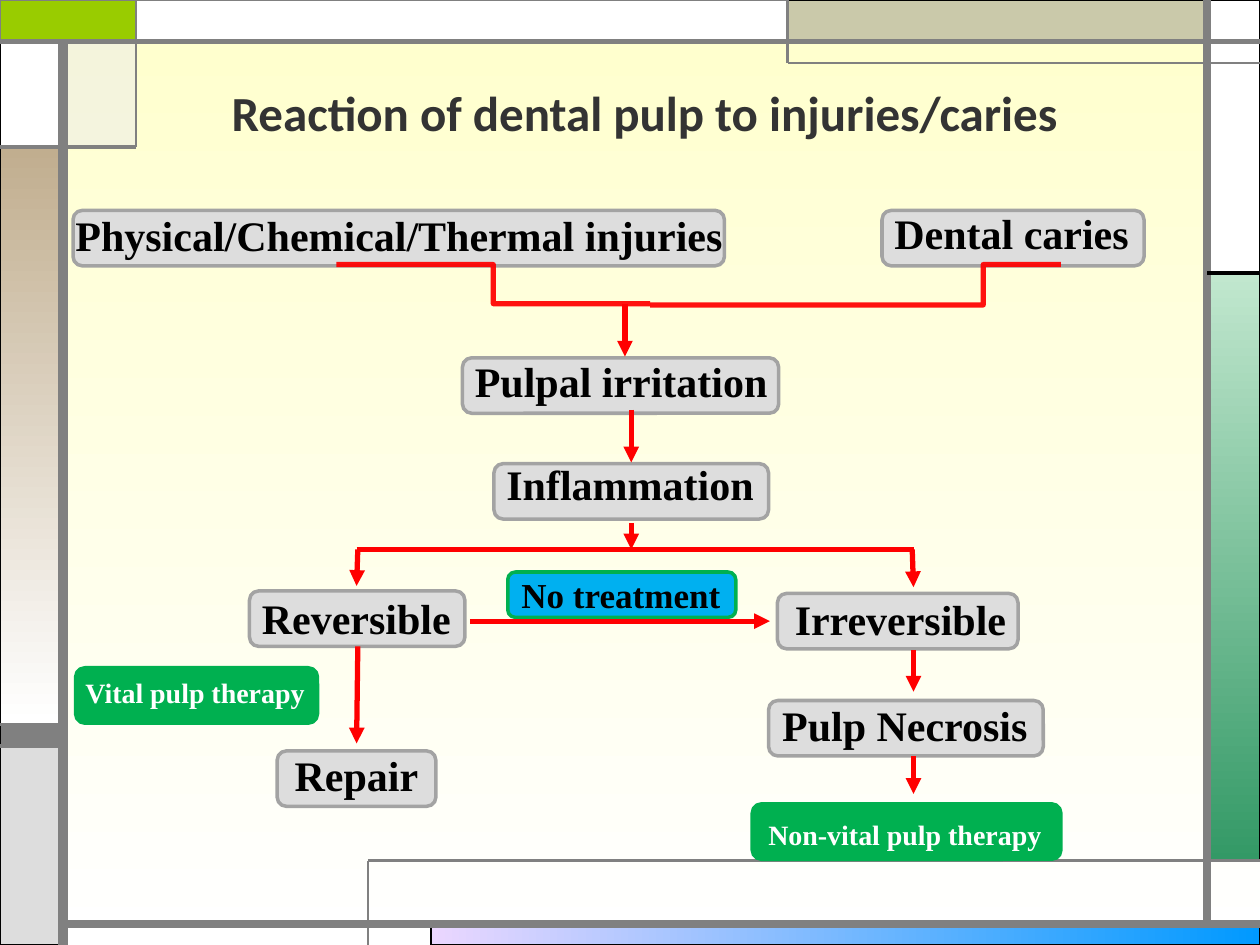
"""Build a flow chart slide on how dental pulp reacts to injuries and caries."""
from dataclasses import dataclass

from lxml import etree
from pptx import Presentation
from pptx import util as u
from pptx.dml.color import RGBColor
from pptx.enum import shapes, text
from pptx.oxml.ns import qn

PX = 9144


@dataclass(frozen=True)
class Theme:
    head: str = "Calibri"
    body: str = "Times New Roman"
    ink: str = "000000"
    dark: str = "333333"
    white: str = "FFFFFF"
    cream: str = "FFFFCC"
    gray: str = "808080"
    pale: str = "DDDDDD"
    edge: str = "A3A3A3"
    red: str = "FF0000"
    glow: str = "C00000"
    green: str = "00B050"
    blue: str = "00B0F0"
    big: int = 28
    mid: int = 24
    note: int = 20
    small: int = 16


def px(*vals):
    return [u.Emu(v * PX) for v in vals]


def sub(node, tag, **attrs):
    return etree.SubElement(node, qn(tag), attrs)


def paint(fill, color):
    if isinstance(color, str):
        fill.solid()
        fill.fore_color.rgb = RGBColor.from_string(color)
        return
    start, end, angle = color
    fill.gradient()
    fill.gradient_angle = angle
    for stop, tone in zip(fill.gradient_stops, (start, end)):
        stop.color.rgb = RGBColor.from_string(tone)


def fade(node, percent):
    for tone in node.iter(qn("a:srgbClr")):
        sub(tone, "a:alpha", val=str(percent * 1000))


def write(frame, words, font, size, color, align=None):
    par = frame.paragraphs[0]
    par.alignment = align
    run = par.add_run()
    run.text = words
    run.font.name, run.font.size, run.font.bold = font, u.Pt(size), True
    run.font.color.rgb = RGBColor.from_string(color)
    return run


class Deck:
    def __init__(self, theme):
        self.theme = theme
        self.show = Presentation()
        self.show.slide_width, self.show.slide_height = px(1000, 750)
        self.slide = self.show.slides.add_slide(self.show.slide_layouts[5])
        self.items = self.slide.shapes
        paint(self.slide.background.fill, (theme.cream, theme.white, 270))

    def title(self, at, words):
        t, box = self.theme, self.items.title
        box.left, box.top, box.width, box.height = px(*at)
        box.text_frame.vertical_anchor = text.MSO_ANCHOR.MIDDLE
        run = write(box.text_frame, words, t.head, t.big, t.dark,
                    text.PP_ALIGN.CENTER)
        props = run.font.fill._xPr
        glow = etree.Element(qn("a:effectLst"))
        props.find(qn("a:solidFill")).addnext(glow)
        cast = sub(glow, "a:outerShdw", blurRad="50800", dist="38100",
                   dir="2700000", algn="tl", rotWithShape="0")
        sub(cast, "a:srgbClr", val=t.glow)

    def box(self, at, fill, line, width, kind=shapes.MSO_SHAPE.RECTANGLE,
            alpha=None):
        item = self.items.add_shape(kind, *px(*at))
        item.shadow.inherit = False
        paint(item.fill, fill)
        if alpha:
            fade(item._element.spPr.find(qn("a:solidFill")), alpha)
        paint(item.line.fill, line)
        item.line.width = u.Pt(width)

    def node(self, at, fill, line):
        self.box(at, fill, line, 2, shapes.MSO_SHAPE.ROUNDED_RECTANGLE)

    def label(self, at, words, size, color):
        frame = self.items.add_textbox(*px(*at)).text_frame
        frame.word_wrap = False
        frame.auto_size = text.MSO_AUTO_SIZE.SHAPE_TO_FIT_TEXT
        write(frame, words, self.theme.body, size, color)
        gap = sub(frame.paragraphs[0]._p.get_or_add_pPr(), "a:spcBef")
        sub(gap, "a:spcPct", val="20000")

    def line(self, ends, color, width, arrow=False, bend=None):
        kind = shapes.MSO_CONNECTOR.ELBOW if bend else shapes.MSO_CONNECTOR.STRAIGHT
        item = self.items.add_connector(kind, *px(*ends))
        paint(item.line.fill, color)
        item.line.width = u.Pt(width)
        props = item._element.spPr
        if arrow:
            sub(item.line._ln, "a:tailEnd", type="triangle")
        if bend:
            fade(item.line._ln, 93)
            guides = props.find(qn("a:prstGeom")).get_or_add_avLst()
            sub(guides, "a:gd", name="adj1", fmla=f"val {bend}")
        sub(props, "a:effectLst")


def frame(deck):
    t = deck.theme
    for at, fill in (
            ((342, 733, 658, 17), ("EBD7FF", "0099FF", 0)),
            ((958, 217, 42, 467), ("C1E7CE", "339966", 270)),
            ((0, 575, 50, 17), t.gray),
            ((0, 592, 50, 158), t.pale),
            ((958, 0, 42, 217), t.white),
            ((625, 0, 333, 33), "CAC9AA")):
        deck.box(at, fill, t.ink, 0.75)
    deck.box((50, 33, 58, 83), "EAEAEA", t.ink, 0.75, alpha=50)
    deck.box((0, 117, 50, 458), ("C1AE8F", t.white, 270), t.ink, 0.75)
    deck.box((0, 33, 50, 83), t.white, t.ink, 0.75)
    deck.box((0, 0, 108, 33), "99CC00", t.gray, 1.5)
    deck.box((108, 0, 517, 33), t.white, t.gray, 0.75)
    for width, *ends in (
            (6, 50, 750, 50, 33), (4.5, 50, 733, 1000, 733),
            (4.5, 958, 733, 958, 0), (3, 0, 33, 1000, 33),
            (1.5, 1000, 50, 625, 50), (1.5, 625, 50, 625, 0),
            (1.5, 108, 0, 108, 117), (2.25, 108, 117, 0, 117),
            (1.5, 292, 750, 292, 683), (1.5, 292, 683, 1000, 683),
            (2.25, 50, 575, 0, 575), (2.25, 50, 592, 0, 592)):
        deck.line(ends, t.gray, width)
    deck.line((958, 217, 1000, 217), t.ink, 2.25)


def chart(deck):
    t = deck.theme
    steps = (
        ("Physical/Chemical/Thermal injuries", (58, 167, 517), (50, 161, 539)),
        ("Dental caries", (700, 167, 208), (700, 160, 208)),
        ("Pulpal irritation", (367, 284, 251), (367, 277, 255)),
        ("Inflammation", (392, 368, 218), (392, 359, 218)),
        ("Reversible", (198, 469, 171), (198, 465, 171)),
        ("Irreversible", (617, 471, 191), (621, 466, 190)),
        ("Pulp Necrosis", (610, 556, 218), (611, 550, 217)),
        ("Repair", (220, 596, 126), (224, 590, 119)))
    for words, spot, place in steps:
        deck.node((*spot, 44), t.pale, t.edge)
        deck.label((*place, 50), words, t.mid, t.ink)
    cures = (
        ("Vital pulp therapy", (60, 530, 192), (58, 531, 197)),
        ("Non-vital pulp therapy", (597, 638, 245), (600, 644, 247)))
    for words, spot, place in cures:
        deck.node((*spot, 44), t.green, t.green)
        deck.label((*place, 37), words, t.small, t.white)
    deck.node((403, 454, 181, 36), t.blue, t.green)
    deck.line((267, 210, 516, 241), t.red, 3, bend=50000)
    deck.line((842, 210, 516, 242), t.red, 3, bend=18900)
    deck.line((283, 436, 725, 436), t.red, 3)
    for ends in (
            (496, 241, 496, 283), (501, 325, 501, 367), (501, 415, 501, 436),
            (284, 436, 283, 465), (724, 436, 725, 466), (725, 516, 725, 549),
            (284, 513, 283, 590), (725, 600, 725, 630), (373, 493, 611, 493)):
        deck.line(ends, t.red, 3, arrow=True)
    deck.label((404, 450, 180, 44), "No treatment", t.note, t.ink)


def main():
    deck = Deck(Theme())
    frame(deck)
    deck.title((92, 17, 839, 144), "Reaction of dental pulp to injuries/caries")
    chart(deck)
    deck.show.save("out.pptx")


if __name__ == "__main__":
    main()
